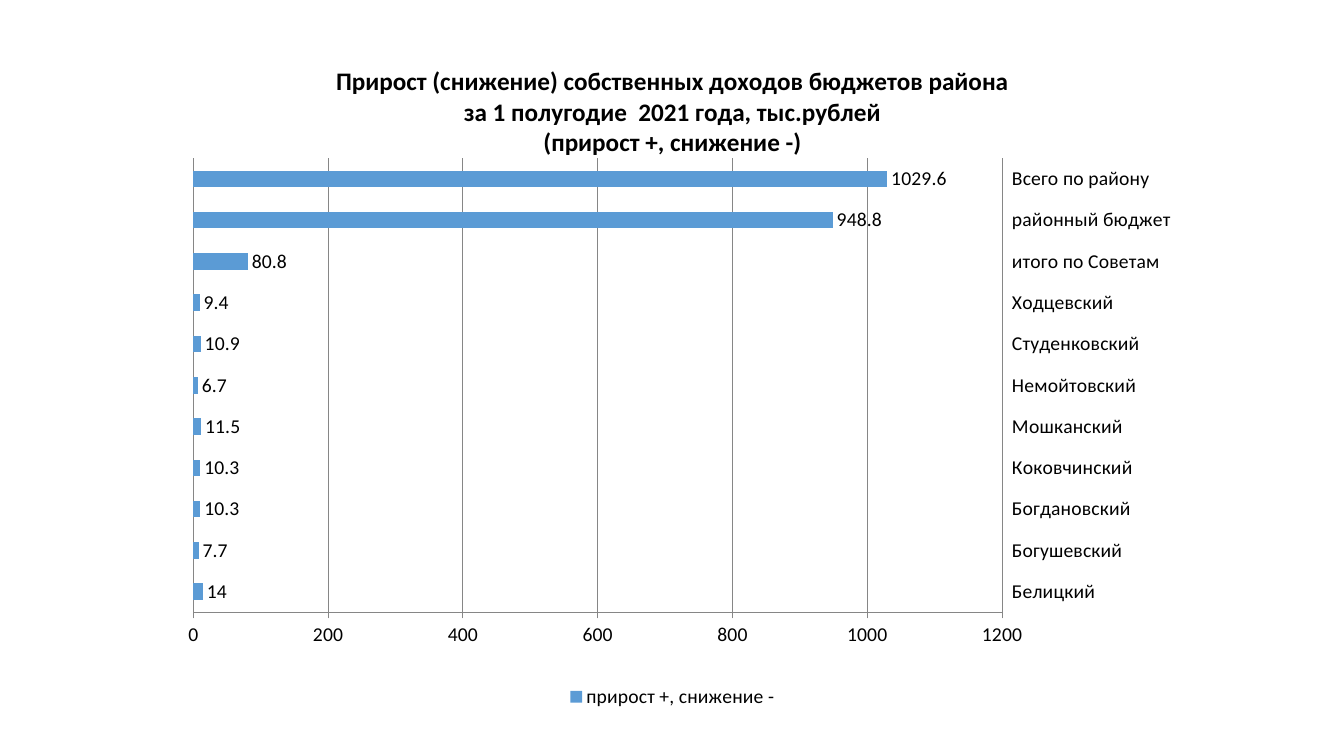
from lxml import etree
from pptx import Presentation
from pptx import util as u
from pptx.chart.data import CategoryChartData
from pptx.dml.color import RGBColor
from pptx.enum import chart as ch
from pptx.enum import text as tx
from pptx.oxml.ns import qn

PX = 9525  # EMU per px at 96 px to the inch
FONT = "Calibri"
BLACK = RGBColor(0x00, 0x00, 0x00)
BLUE = RGBColor(0x5B, 0x9B, 0xD5)
GREY = RGBColor(0x86, 0x86, 0x86)

HEADING = [
    "Прирост (снижение) собственных доходов бюджетов района",
    " за 1 полугодие  2021 года, тыс.рублей ",
    "(прирост +, снижение -)",
]
SERIES_NAME = "прирост +, снижение -"
# Listed from the bottom bar to the top one
GROWTH = {
    "Белицкий": 14,
    "Богушевский": 7.7,
    "Богдановский": 10.3,
    "Коковчинский ": 10.3,
    "Мошканский": 11.5,
    "Немойтовский": 6.7,
    "Студенковский": 10.9,
    "Ходцевский": 9.4,
    "итого по Советам": 80.8,
    "районный бюджет": 948.8,
    "Всего по району": 1029.6,
}
PLOT_AREA = {"x": 0.032, "y": 0.172, "w": 0.79, "h": 0.678}


def style_font(font, size=14, bold=False, color=BLACK):
    font.name = FONT
    font.size = u.Pt(size)
    font.bold = bold
    font.color.rgb = color


def write_text(paragraph, text, align=tx.PP_ALIGN.CENTER, **font_format):
    paragraph.alignment = align
    run = paragraph.add_run()
    run.text = text
    style_font(run.font, **font_format)


def style_line(line, color=GREY, width=0.75):
    line.color.rgb = color
    line.width = u.Pt(width)


def add_growth_chart(slide, left, top, width, height):
    growth_data = CategoryChartData(number_format="General")
    growth_data.categories = GROWTH.keys()
    growth_data.add_series(SERIES_NAME, GROWTH.values())
    frame = slide.shapes.add_chart(
        ch.XL_CHART_TYPE.BAR_CLUSTERED,
        left * PX, top * PX, width * PX, height * PX, growth_data)
    growth = frame.chart
    style_font(growth.font, size=10)
    return growth


def set_heading(growth):
    growth.has_title = True
    heading = growth.chart_title.text_frame
    for i, line in enumerate(HEADING):
        paragraph = heading.add_paragraph() if i else heading.paragraphs[0]
        write_text(paragraph, line, size=18, bold=True)
    growth.chart_title.include_in_layout = False


def style_bars(growth):
    bars = growth.plots[0]
    bars.gap_width = 150
    bars.vary_by_categories = False
    series = bars.series[0]
    series.invert_if_negative = False
    series.format.fill.solid()
    series.format.fill.fore_color.rgb = BLUE
    values = series.data_labels
    values.show_value = True
    values.position = ch.XL_LABEL_POSITION.OUTSIDE_END
    style_font(values.font)


def style_axes(growth):
    councils, amounts = growth.category_axis, growth.value_axis
    for axis in (councils, amounts):
        style_font(axis.tick_labels.font)
        style_line(axis.format.line)
    councils.major_tick_mark = ch.XL_TICK_MARK.NONE
    councils.tick_label_position = ch.XL_TICK_LABEL_POSITION.HIGH
    councils.has_major_gridlines = False
    amounts.major_tick_mark = ch.XL_TICK_MARK.OUTSIDE
    amounts.minimum_scale, amounts.maximum_scale = 0, 1200
    amounts.major_unit = 200
    amounts.has_major_gridlines = True
    style_line(amounts.major_gridlines.format.line)


def set_legend(growth):
    growth.has_legend = True
    growth.legend.position = ch.XL_LEGEND_POSITION.BOTTOM
    growth.legend.include_in_layout = False
    style_font(growth.legend.font)


def place_plot_area(growth):
    plot_area = growth.element.find(".//" + qn("c:plotArea"))
    for old_layout in plot_area.findall(qn("c:layout")):
        plot_area.remove(old_layout)
    layout = etree.Element(qn("c:layout"))
    manual = etree.SubElement(layout, qn("c:manualLayout"))
    settings = {"layoutTarget": "inner", "xMode": "edge", "yMode": "edge",
                **PLOT_AREA}
    for tag, value in settings.items():
        etree.SubElement(manual, qn("c:" + tag)).set("val", str(value))
    plot_area.insert(0, layout)


def main():
    deck = Presentation()
    deck.slide_width, deck.slide_height = 1280 * PX, 720 * PX
    slide = deck.slides.add_slide(deck.slide_layouts[6])

    # Bars of revenue growth by council
    growth = add_growth_chart(slide, 153, 41, 975, 638)
    style_bars(growth)
    style_axes(growth)
    place_plot_area(growth)

    # Heading and legend
    set_heading(growth)
    set_legend(growth)

    deck.save("out.pptx")


if __name__ == "__main__":
    main()
